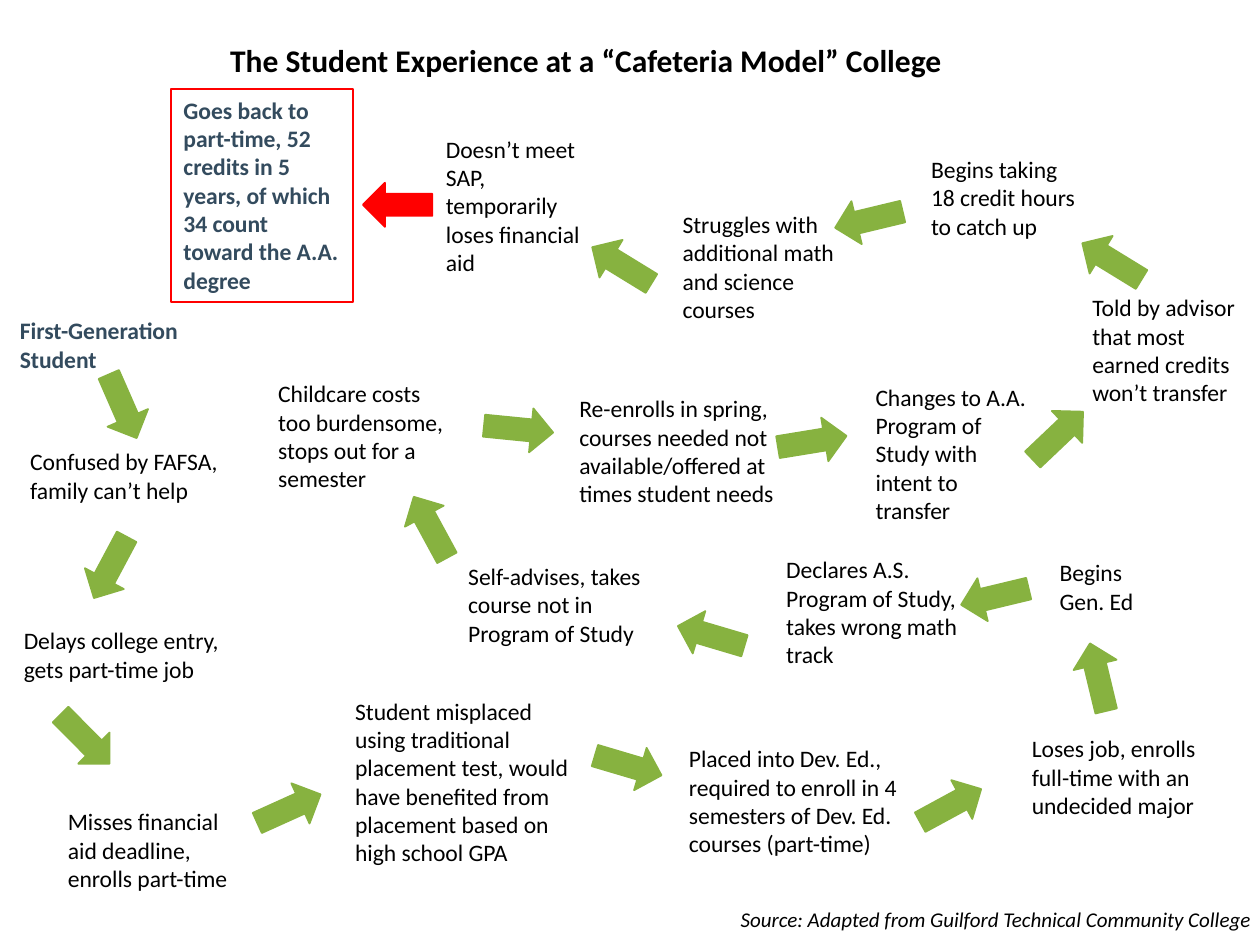
"""Builds the slide on the student experience at a cafeteria model college."""
import pptx
import pptx.util
import pptx.dml.color
import pptx.enum.shapes
import pptx.enum.text

Cm = pptx.util.Cm
SHAPE = pptx.enum.shapes.MSO_SHAPE
BLACK, SLATE, GREEN, RED = "000000", "334B5E", "87B240", "FF0000"


def color(value):
    return pptx.dml.color.RGBColor.from_string(value)


def write(s, text, size=13.5, ink=BLACK, bold=False, italic=False):
    tf = s.text_frame
    tf.word_wrap = True
    tf.vertical_anchor = pptx.enum.text.MSO_ANCHOR.TOP
    tf.text = text
    for p in tf.paragraphs:
        p.alignment = pptx.enum.text.PP_ALIGN.LEFT
        for r in p.runs:
            r.font.name = "Calibri"
            r.font.size = pptx.util.Pt(size)
            r.font.bold = bold
            r.font.italic = italic
            r.font.color.rgb = color(ink)


prs = pptx.Presentation()
prs.slide_width, prs.slide_height = Cm(25.4), Cm(19.05)
slide = prs.slides.add_slide(prs.slide_layouts[6])
shapes = slide.shapes

title = shapes.add_textbox(Cm(4.39), Cm(0.71), Cm(14.9), Cm(1.02))
write(title, "The Student Experience at a “Cafeteria Model” College", 18, bold=True)

start = shapes.add_textbox(Cm(0.15), Cm(6.25), Cm(4.01), Cm(1.42))
write(start, "First-Generation Student", ink=SLATE, bold=True)

# left, top, width, height, text
steps = [
    (0.36, 8.89, 4.42, 1.42, "Confused by FAFSA,\nfamily can’t help"),
    (0.23, 12.5, 4.55, 1.42, "Delays college entry, gets part-time job"),
    (1.12, 16.15, 3.94, 1.98, "Misses financial aid deadline, enrolls part-time"),
    (6.91, 13.92, 4.85, 4.29, "Student misplaced using traditional placement test, "
     "would have benefited from placement based on high school GPA"),
    (13.64, 14.88, 4.75, 3.15, "Placed into Dev. Ed., required to enroll in 4 "
     "semesters of Dev. Ed. courses (part-time)"),
    (20.55, 14.68, 4.29, 1.98, "Loses job, enrolls full-time with an undecided major"),
    (21.11, 11.13, 2.67, 1.42, "Begins Gen. Ed"),
    (15.6, 11.07, 3.95, 3.15, "Declares A.S. Program of Study, takes wrong math track"),
    (9.19, 11.2, 4.0, 2.57, "Self-advises, takes course not in Program of Study"),
    (5.36, 7.52, 3.96, 2.57, "Childcare costs too burdensome, stops out for a semester"),
    (11.43, 7.82, 5.05, 2.57, "Re-enrolls in spring, courses needed not "
     "available/offered at times student needs"),
    (17.4, 7.59, 3.68, 3.15, "Changes to A.A. Program of Study with intent to transfer"),
    (21.77, 5.79, 3.58, 2.57, "Told by advisor that most earned credits won’t transfer"),
    (18.52, 3.0, 3.45, 2.57, "Begins taking 18 credit hours to catch up"),
    (13.51, 4.11, 3.6, 2.57, "Struggles with additional math and science courses"),
    (8.74, 2.59, 3.38, 3.15, "Doesn’t meet SAP, temporarily loses financial aid"),
]
for left, top, width, height, text in steps:
    s = shapes.add_textbox(Cm(left), Cm(top), Cm(width), Cm(height))
    write(s, text)

outcome = shapes.add_shape(SHAPE.RECTANGLE, Cm(3.45), Cm(1.8), Cm(3.67), Cm(4.29))
outcome.shadow.inherit = False
outcome.fill.background()
outcome.line.color.rgb = color(RED)
outcome.line.width = pptx.util.Pt(1)
write(outcome, "Goes back to part-time, 52 credits in 5 years, of which 34 count "
      "toward the A.A. degree", ink=SLATE, bold=True)

arrows = [
    (2.03, 7.49, 336.4, GREEN),
    (1.78, 10.74, 28.1, GREEN),
    (1.27, 14.2, 315.2, GREEN),
    (5.38, 15.6, 245.7, GREEN),
    (12.22, 14.73, 286.5, GREEN),
    (18.72, 15.54, 241.5, GREEN),
    (21.69, 12.95, 166.5, GREEN),
    (19.61, 11.33, 76.5, GREEN),
    (13.89, 12.12, 106.5, GREEN),
    (8.23, 9.93, 151.5, GREEN),
    (10.01, 7.95, 275.7, GREEN),
    (15.93, 8.2, 260.7, GREEN),
    (20.88, 8.08, 226.5, GREEN),
    (21.97, 4.57, 121.5, GREEN),
    (17.07, 3.73, 76.5, GREEN),
    (12.09, 4.65, 121.5, GREEN),
    (7.57, 3.43, 90, RED),
]
for left, top, angle, fill in arrows:
    s = shapes.add_shape(SHAPE.DOWN_ARROW, Cm(left), Cm(top), Cm(0.89), Cm(1.4))
    s.rotation = angle
    s.shadow.inherit = False
    s.fill.solid()
    s.fill.fore_color.rgb = color(fill)
    s.line.color.rgb = color(fill)
    s.line.width = pptx.util.Pt(1)

source = shapes.add_textbox(Cm(14.68), Cm(18.16), Cm(10.9), Cm(0.76))
write(source, "Source: Adapted from Guilford Technical Community College", 12, italic=True)

prs.save("out.pptx")
